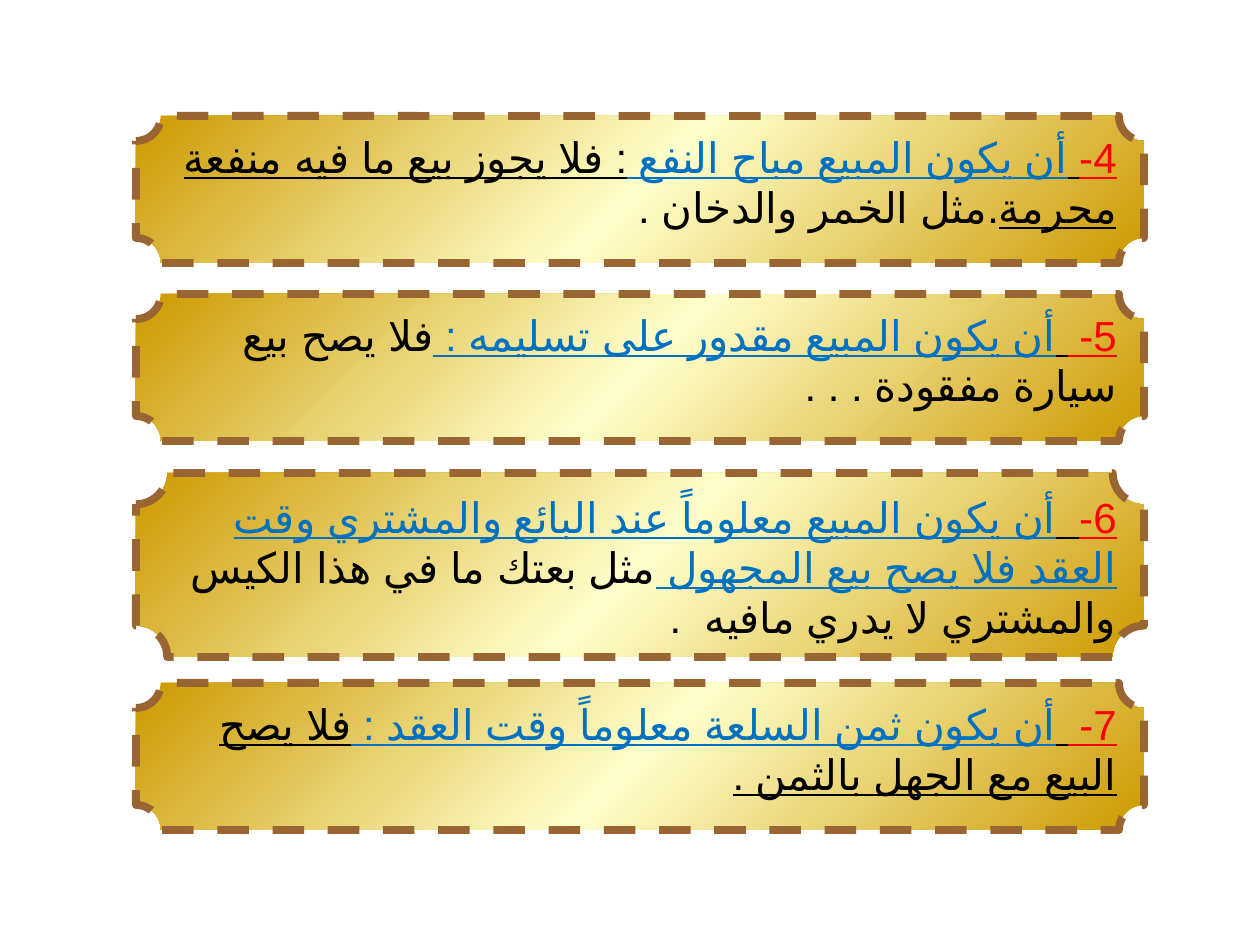
import copy
from dataclasses import dataclass

import pptx
import pptx.dml.color
import pptx.enum.dml
import pptx.enum.lang
import pptx.enum.shapes
import pptx.enum.text
import pptx.oxml.ns
import pptx.slide
import pptx.text.text
import pptx.util
from lxml import etree

RGBColor = pptx.dml.color.RGBColor
qn = pptx.oxml.ns.qn

GOLD = RGBColor(0xCC, 0x99, 0x00)
CREAM = RGBColor(0xFF, 0xFF, 0xCC)
BROWN = RGBColor(0x99, 0x66, 0x33)
RED = RGBColor(0xFF, 0x00, 0x00)
BLUE = RGBColor(0x00, 0x70, 0xC0)
BLACK = RGBColor(0x00, 0x00, 0x00)

PIXELS_PER_INCH = 126
FONT_NAME = "Arial"
FONT_SIZE = 24
PLAQUE_LEFT = 136
PLAQUE_WIDTH = 1008
TEXT_WIDTH = 993


@dataclass(frozen=True)
class Piece:
    text: str
    color: RGBColor
    underline: bool = True


@dataclass(frozen=True)
class Condition:
    top: int
    height: int
    text_offset: int
    text_height: int
    pieces: tuple[Piece, ...]


CONDITIONS = (
    Condition(116, 147, 9, 115, (
        Piece("4-", RED),
        Piece(" ", BLACK),
        Piece("أن يكون المبيع مباح النفع ", BLUE),
        Piece(": فلا يجوز بيع ما فيه منفعة محرمة", BLACK),
        Piece(".مثل الخمر والدخان .", BLACK, False),
    )),
    Condition(294, 147, 9, 115, (
        Piece("5- ", RED),
        Piece(" ", BLACK),
        Piece("أن يكون المبيع مقدور على تسليمه : ", BLUE),
        Piece("فلا يصح بيع سيارة مفقودة . . . ", BLACK, False),
    )),
    Condition(473, 184, 12, 165, (
        Piece("6-", RED),
        Piece("  ", BLACK),
        Piece("أن يكون المبيع معلوماً عند البائع والمشتري وقت العقد فلا يصح بيع المجهول ", BLUE),
        Piece("مثل بعتك ما في هذا الكيس والمشتري لا يدري مافيه  .", BLACK, False),
    )),
    Condition(683, 147, 9, 115, (
        Piece("7- ", RED),
        Piece(" ", BLACK),
        Piece("أن يكون ثمن السلعة معلوماً وقت العقد : ", BLUE),
        Piece("فلا يصح البيع مع الجهل بالثمن .", BLACK),
    )),
)


def px(length: int) -> pptx.util.Emu:
    return pptx.util.Emu(round(length * pptx.util.Inches(1) / PIXELS_PER_INCH))


def fill_with_gold(fill) -> None:
    fill.gradient()
    fill.gradient_angle = 315
    first_stop = fill.gradient_stops[0]
    stop_list = fill._fill._gradFill.find(qn("a:gsLst"))
    stop_list.insert(1, copy.deepcopy(stop_list[0]))
    for stop, position, color in zip(fill.gradient_stops, (0, 0.5, 1), (GOLD, CREAM, GOLD)):
        stop.position = position
        stop.color.rgb = color


def add_plaque(group, condition: Condition) -> None:
    shape = group.shapes.add_shape(
        pptx.enum.shapes.MSO_SHAPE.PLAQUE,
        px(PLAQUE_LEFT), px(condition.top), px(PLAQUE_WIDTH), px(condition.height),
    )
    shape.shadow.inherit = False
    shape.adjustments[0] = 0.17
    fill_with_gold(shape.fill)
    shape.line.color.rgb = BROWN
    shape.line.width = pptx.util.Pt(4.5)
    shape.line.dash_style = pptx.enum.dml.MSO_LINE.DASH


def add_piece(paragraph: pptx.text.text._Paragraph, piece: Piece) -> None:
    run = paragraph.add_run()
    run.text = piece.text
    run.font.name = FONT_NAME
    run.font.size = pptx.util.Pt(FONT_SIZE)
    run.font.underline = piece.underline
    run.font.color.rgb = piece.color
    run.font.language_id = pptx.enum.lang.MSO_LANGUAGE_ID.ARABIC
    etree.SubElement(run.font._element, qn("a:cs")).set("typeface", FONT_NAME)


def add_wording(group, condition: Condition) -> None:
    box = group.shapes.add_textbox(
        px(PLAQUE_LEFT), px(condition.top + condition.text_offset),
        px(TEXT_WIDTH), px(condition.text_height),
    )
    box.text_frame.word_wrap = True
    box.text_frame.auto_size = pptx.enum.text.MSO_AUTO_SIZE.SHAPE_TO_FIT_TEXT
    paragraph = box.text_frame.paragraphs[0]
    paragraph.alignment = pptx.enum.text.PP_ALIGN.RIGHT
    paragraph._p.get_or_add_pPr().set("rtl", "1")
    for piece in condition.pieces:
        add_piece(paragraph, piece)


def add_condition(slide: pptx.slide.Slide, condition: Condition) -> None:
    group = slide.shapes.add_group_shape()
    add_plaque(group, condition)
    add_wording(group, condition)


def main() -> None:
    presentation = pptx.Presentation()
    presentation.slide_width = pptx.util.Inches(10)
    presentation.slide_height = pptx.util.Inches(7.5)
    slide = presentation.slides.add_slide(presentation.slide_layouts[6])
    for condition in CONDITIONS:
        add_condition(slide, condition)
    presentation.save("out.pptx")


if __name__ == "__main__":
    main()
